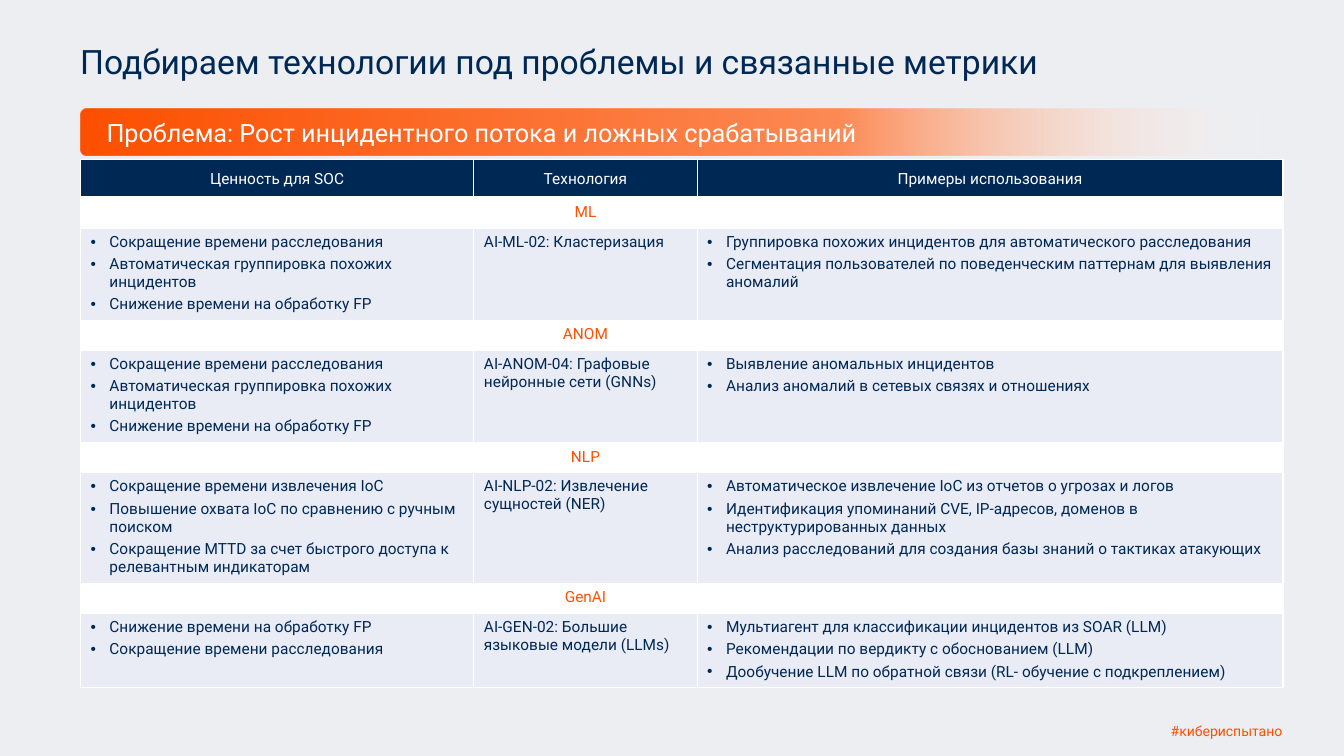
"""Build a slide that matches AI technologies to SOC problems and metrics."""
from dataclasses import dataclass

import lxml.etree
import pptx
import pptx.dml.color
import pptx.enum.shapes
import pptx.enum.text
import pptx.oxml.ns
import pptx.shapes.base
import pptx.slide
import pptx.table
import pptx.text.text
import pptx.util

Pt = pptx.util.Pt
RGBColor = pptx.dml.color.RGBColor
Align = pptx.enum.text.PP_ALIGN
Anchor = pptx.enum.text.MSO_ANCHOR
qn = pptx.oxml.ns.qn

FONT = "Roboto"
NAVY = RGBColor(0x00, 0x28, 0x55)
ORANGE = RGBColor(0xFE, 0x50, 0x00)
LIGHT_ORANGE = RGBColor(0xFE, 0x8A, 0x55)
WHITE = RGBColor(0xFF, 0xFF, 0xFF)
CELL_TINT = RGBColor(0xE9, 0xEB, 0xF5)
BACKGROUND = RGBColor(0xEC, 0xEE, 0xF2)

COLUMN_WIDTHS = (281, 159.5, 418.5)
HEADER_HEIGHT = 27.5
BAND_HEIGHT = 21.3
HEADERS = ("Ценность для SOC", "Технология", "Примеры использования")
BULLET_INDENT = 13.5


@dataclass(frozen=True)
class Box:
    left: float
    top: float
    width: float
    height: float

    def lengths(self) -> tuple[int, int, int, int]:
        return Pt(self.left), Pt(self.top), Pt(self.width), Pt(self.height)


@dataclass(frozen=True)
class TextStyle:
    size: float
    color: RGBColor
    align: Align = Align.LEFT
    bulleted: bool = False


@dataclass(frozen=True)
class CellStyle:
    text: TextStyle
    fill: RGBColor
    anchor: Anchor = Anchor.TOP
    bottom_border: float = 1


@dataclass(frozen=True)
class Topic:
    name: str
    values: tuple[str, ...]
    technology: str
    examples: tuple[str, ...]
    height: float


TITLE_STYLE = TextStyle(24, NAVY)
PROBLEM_STYLE = TextStyle(18, WHITE)
HASHTAG_STYLE = TextStyle(10, ORANGE, Align.RIGHT)
HEADER_CELL = CellStyle(TextStyle(11, WHITE, Align.CENTER), NAVY, Anchor.MIDDLE, 3)
BAND_CELL = CellStyle(TextStyle(11, ORANGE, Align.CENTER), WHITE)
PLAIN_CELL = CellStyle(TextStyle(11, NAVY), CELL_TINT)
BULLET_CELL = CellStyle(TextStyle(11, NAVY, bulleted=True), CELL_TINT)

FASTER_INVESTIGATION = "Сокращение времени расследования"
LESS_FP_WORK = "Снижение времени на обработку FP"
GROUPING_VALUES = (
    FASTER_INVESTIGATION,
    "Автоматическая группировка похожих инцидентов",
    LESS_FP_WORK,
)
TOPICS = (
    Topic("ML", GROUPING_VALUES, "AI-ML-02: Кластеризация", (
        "Группировка похожих инцидентов для автоматического расследования",
        "Сегментация пользователей по поведенческим паттернам для выявления аномалий",
    ), 65.5),
    Topic("ANOM", GROUPING_VALUES, "AI-ANOM-04: Графовые нейронные сети (GNNs)", (
        "Выявление аномальных инцидентов",
        "Анализ аномалий в сетевых связях и отношениях",
    ), 65.5),
    Topic("NLP", (
        "Сокращение времени извлечения IoC",
        "Повышение охвата IoC по сравнению с ручным поиском",
        "Сокращение MTTD за счет быстрого доступа к релевантным индикаторам",
    ), "AI-NLP-02: Извлечение сущностей (NER)", (
        "Автоматическое извлечение IoC из отчетов о угрозах и логов",
        "Идентификация упоминаний CVE, IP-адресов, доменов в неструктурированных данных",
        "Анализ расследований для создания базы знаний о тактиках атакующих",
    ), 78.5),
    Topic("GenAI", (LESS_FP_WORK, FASTER_INVESTIGATION),
          "AI-GEN-02: Большие языковые модели (LLMs)", (
        "Мультиагент для классификации инцидентов из SOAR (LLM)",
        "Рекомендации по вердикту с обоснованием (LLM)",
        "Дообучение LLM по обратной связи (RL- обучение с подкреплением)",
    ), 52),
)


def add_element(parent: lxml.etree._Element, tag: str, **attributes: str) -> lxml.etree._Element:
    return lxml.etree.SubElement(parent, qn(tag), attributes)


def add_bullet(paragraph: pptx.text.text._Paragraph) -> None:
    properties = paragraph._p.get_or_add_pPr()
    properties.set("marL", str(Pt(BULLET_INDENT)))
    properties.set("indent", str(-Pt(BULLET_INDENT)))
    add_element(properties, "a:buFont", typeface="Arial")
    add_element(properties, "a:buChar", char="•")


def write_text(frame: pptx.text.text.TextFrame, lines: tuple[str, ...], style: TextStyle) -> None:
    frame.text = "\n".join(lines)
    for index, paragraph in enumerate(frame.paragraphs):
        paragraph.alignment = style.align
        if index:
            paragraph.space_before = Pt(3)
        if style.bulleted:
            add_bullet(paragraph)
        for run in paragraph.runs:
            run.font.name = FONT
            run.font.size = Pt(style.size)
            run.font.color.rgb = style.color
        if not paragraph.runs:
            add_element(paragraph._p, "a:endParaRPr", sz=str(round(style.size * 100)))


def add_title(slide: pptx.slide.Slide, box: Box, text: str) -> None:
    title = slide.shapes.title
    title.left, title.top, title.width, title.height = box.lengths()
    title.text_frame.auto_size = pptx.enum.text.MSO_AUTO_SIZE.NONE
    title.text_frame.vertical_anchor = Anchor.TOP
    write_text(title.text_frame, (text,), TITLE_STYLE)
    title.text_frame.paragraphs[0].line_spacing = 0.9


def add_text(slide: pptx.slide.Slide, box: Box, text: str, style: TextStyle) -> None:
    frame = slide.shapes.add_textbox(*box.lengths()).text_frame
    frame.word_wrap = True
    write_text(frame, (text,), style)


def add_problem_bar(slide: pptx.slide.Slide, box: Box) -> None:
    bar = slide.shapes.add_shape(pptx.enum.shapes.MSO_SHAPE.ROUNDED_RECTANGLE, *box.lengths())
    bar.adjustments[0] = 0.13
    bar.shadow.inherit = False
    bar.line.fill.background()
    bar.fill.gradient()
    bar.fill.gradient_angle = 0
    stops = bar._element.spPr.find(qn("a:gradFill")).find(qn("a:gsLst"))
    for stop in list(stops):
        stops.remove(stop)
    for percent, color, opacity in ((0, ORANGE, 100), (63, LIGHT_ORANGE, 100), (100, WHITE, 0)):
        stop = add_element(stops, "a:gs", pos=str(percent * 1000))
        color_element = add_element(stop, "a:srgbClr", val=str(color))
        add_element(color_element, "a:alpha", val=str(opacity * 1000))


def fill_cell(cell: pptx.table._Cell, lines: tuple[str, ...], style: CellStyle) -> None:
    write_text(cell.text_frame, lines, style.text)
    cell.vertical_anchor = style.anchor
    properties = cell._tc.get_or_add_tcPr()
    for side, width in (("L", 1), ("R", 1), ("T", 1), ("B", style.bottom_border)):
        border = add_element(properties, f"a:ln{side}", w=str(Pt(width)))
        add_element(add_element(border, "a:solidFill"), "a:srgbClr", val=str(WHITE))
    cell.fill.solid()
    cell.fill.fore_color.rgb = style.fill


def add_topic_table(slide: pptx.slide.Slide, left: float, top: float) -> None:
    rows = [(HEADER_HEIGHT, [((header,), HEADER_CELL) for header in HEADERS])]
    for topic in TOPICS:
        rows.append((BAND_HEIGHT, [((text,), BAND_CELL) for text in ("", topic.name, "")]))
        rows.append((topic.height, [(topic.values, BULLET_CELL),
                                    ((topic.technology,), PLAIN_CELL),
                                    (topic.examples, BULLET_CELL)]))
    box = Box(left, top, sum(COLUMN_WIDTHS), sum(height for height, _ in rows))
    table = slide.shapes.add_table(len(rows), len(COLUMN_WIDTHS), *box.lengths()).table
    table.first_row = table.horz_banding = False
    for column, width in zip(table.columns, COLUMN_WIDTHS):
        column.width = Pt(width)
    for row, (height, contents) in zip(table.rows, rows):
        row.height = Pt(height)
        for cell, (lines, style) in zip(row.cells, contents):
            fill_cell(cell, lines, style)


def main() -> None:
    presentation = pptx.Presentation()
    presentation.slide_width, presentation.slide_height = Pt(960), Pt(540)
    slide = presentation.slides.add_slide(presentation.slide_layouts[5])
    slide.background.fill.solid()
    slide.background.fill.fore_color.rgb = BACKGROUND
    add_title(slide, Box(50, 29, 745, 47.5), "Подбираем технологии под проблемы и связанные метрики")
    add_problem_bar(slide, Box(57.5, 77.5, 859, 33.5))
    add_text(slide, Box(69, 80, 762.5, 29),
             "Проблема: Рост инцидентного потока и ложных срабатываний", PROBLEM_STYLE)
    add_topic_table(slide, 57.5, 114)
    add_text(slide, Box(746, 512.5, 177, 19.5), "#кибериспытано", HASHTAG_STYLE)
    presentation.save("out.pptx")


if __name__ == "__main__":
    main()
